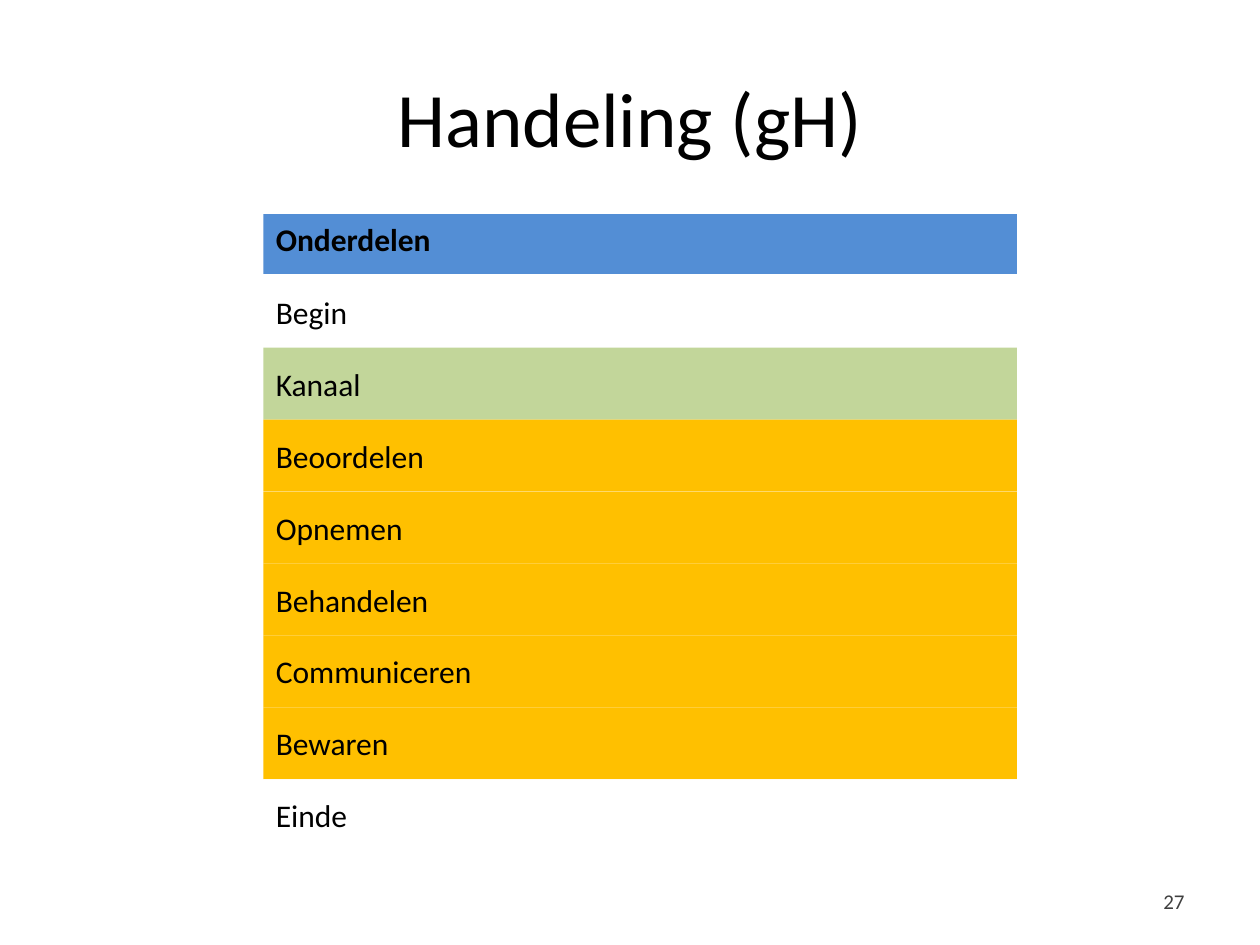
from lxml.etree import SubElement
from pptx import Presentation
from pptx.dml.color import RGBColor
from pptx.enum.shapes import MSO_CONNECTOR, MSO_SHAPE
from pptx.enum.text import MSO_ANCHOR, PP_ALIGN
from pptx.oxml.ns import qn
from pptx.util import Cm, Pt

LEFT, WIDTH = 5.31, 15.19
HEADER_TOP, HEADER_HEIGHT = 4.32, 1.24
ROW_HEIGHT = 1.45
GREEN, ORANGE, WHITE = "C2D69A", "FFC000", "FFFFFF"
PARTS = [
    ("Begin", None),
    ("Kanaal", GREEN),
    ("Beoordelen", ORANGE),
    ("Opnemen", ORANGE),
    ("Behandelen", ORANGE),
    ("Communiceren", ORANGE),
    ("Bewaren", ORANGE),
    ("Einde", WHITE),
]


def color(value):
    return RGBColor.from_string(value)


class SlideBuilder:
    """Holds the text style and the current page."""

    font_format = {"name": "Calibri", "size": Pt(18), "bold": False}

    def __init__(self, page):
        self.page = page
        self.group = page.shapes.add_group_shape()

    def set_text(self, shape, text, anchor=MSO_ANCHOR.MIDDLE,
                 align=PP_ALIGN.LEFT, ink="000000", **font_changes):
        frame = shape.text_frame
        frame.word_wrap = True
        frame.vertical_anchor = anchor
        para = frame.paragraphs[0]
        para.alignment = align
        span = para.add_run()
        span.text = text
        for name, value in {**self.font_format, **font_changes}.items():
            setattr(span.font, name, value)
        span.font.color.rgb = color(ink)

    def title(self, text, *box):
        title = self.page.shapes.title
        for name, value in zip(("left", "top", "width", "height"), box):
            setattr(title, name, Cm(value))
        self.set_text(title, text, align=PP_ALIGN.CENTER, size=Pt(44))

    def label(self, text, *box, **text_format):
        shape = self.page.shapes.add_textbox(*map(Cm, box))
        self.set_text(shape, text, **text_format)

    def row(self, text, top, height, fill, **text_format):
        """Add one row to the group; without a fill it is a plain text box."""
        box = [Cm(length) for length in (LEFT, top, WIDTH, height)]
        if fill is None:
            shape = self.group.shapes.add_textbox(*box)
        else:
            shape = self.group.shapes.add_shape(MSO_SHAPE.RECTANGLE, *box)
            shape.shadow.inherit = False
            shape.fill.solid()
            shape.fill.fore_color.rgb = color(fill)
            shape.line.fill.background()
        self.set_text(shape, text, **text_format)

    def rule(self, top):
        line = self.group.shapes.add_connector(
            MSO_CONNECTOR.STRAIGHT, Cm(LEFT), Cm(top), Cm(LEFT + WIDTH), Cm(top))
        line.line.color.rgb = color(WHITE)
        line.line.width = Pt(2)
        SubElement(line._element.spPr, qn("a:effectLst"))


def main():
    deck = Presentation()
    deck.slide_width, deck.slide_height = Cm(25.4), Cm(19.05)
    builder = SlideBuilder(deck.slides.add_slide(deck.slide_layouts[5]))

    builder.title("Handeling (gH)", 1.27, 0.76, 22.86, 3.18)
    builder.row("Onderdelen", HEADER_TOP, HEADER_HEIGHT, "538ED5",
                anchor=MSO_ANCHOR.TOP, bold=True)
    rows_top = HEADER_TOP + HEADER_HEIGHT
    builder.rule(rows_top)
    for index, (name, fill) in enumerate(PARTS):
        builder.row(name, rows_top + index * ROW_HEIGHT, ROW_HEIGHT, fill)
    builder.label("27", 18.2, 17.66, 5.93, 1.01, align=PP_ALIGN.RIGHT,
                  ink="3F3F3F", size=Pt(12))

    deck.save("out.pptx")


if __name__ == "__main__":
    main()
